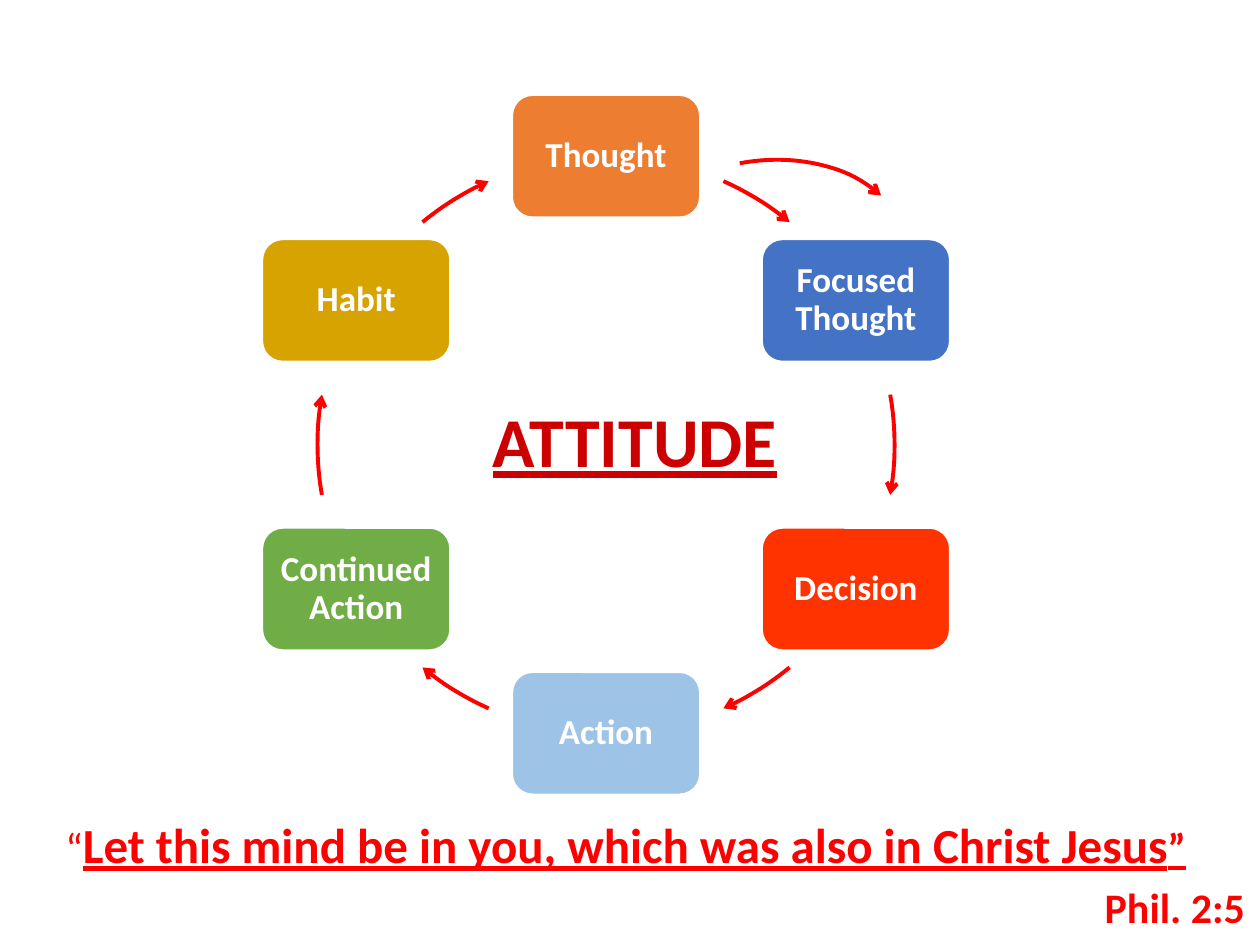
from math import cos, radians, sin

from lxml.etree import SubElement
from pptx import Presentation
from pptx.dml.color import RGBColor
from pptx.enum.shapes import MSO_SHAPE
from pptx.enum.text import MSO_ANCHOR, PP_ALIGN
from pptx.oxml.ns import qn
from pptx.util import Inches, Pt

COLORS = {
    "white": "FFFFFF", "red": "FF0000", "crimson": "CC0000",
    "orange": "ED7D31", "blue": "4472C4", "scarlet": "FF3300",
    "sky": "9DC3E6", "green": "70AD47", "gold": "D6A300",
}
STEPS = [
    ("Thought", "orange"), ("Focused Thought", "blue"), ("Decision", "scarlet"),
    ("Action", "sky"), ("Continued Action", "green"), ("Habit", "gold"),
]
# Clockwise sweeps in degrees, measured from three o'clock
SWEEPS = [(294, 309.5), (350, 10), (50.5, 66), (114, 129.5), (170, 190), (230.5, 246)]
MID_X, MID_Y, RADIUS = 4.81, 3.53, 2.29
BOX_W, BOX_H = 1.49, 0.97


def color(name):
    return RGBColor.from_string(COLORS[name])


def apply(target, values):
    for name, value in values.items():
        setattr(target, name, value)


class Page:
    """Holds the shared text style and the slide being built."""

    def __init__(self, slide):
        self.slide = slide
        self.font = {"name": "Calibri", "bold": True}

    def label(self, para, text, tint, **style):
        run = para.add_run()
        run.text = text
        apply(run.font, {**self.font, **style})
        run.font.color.rgb = color(tint)

    def shape(self, kind, *place):
        shape = self.slide.shapes.add_shape(kind, *map(Inches, place))
        shape.shadow.inherit = False
        return shape

    def box(self, text, tint, x, y):
        """Draw a step box centred on x, y."""
        box = self.shape(MSO_SHAPE.ROUNDED_RECTANGLE,
                         x - BOX_W / 2, y - BOX_H / 2, BOX_W, BOX_H)
        box.fill.solid()
        box.fill.fore_color.rgb = color(tint)
        box.line.color.rgb = color("white")
        box.line.width = Pt(1)
        apply(box.text_frame, {
            "word_wrap": True, "vertical_anchor": MSO_ANCHOR.MIDDLE,
            "margin_left": Inches(0.1), "margin_right": Inches(0.1),
        })
        para = box.text_frame.paragraphs[0]
        apply(para, {"alignment": PP_ALIGN.CENTER, "line_spacing": 0.9})
        self.label(para, text, "white", size=Pt(20))

    def arc(self, place, start, end, turn=0):
        """Draw a clockwise arrow along the ellipse filling place."""
        arc = self.shape(MSO_SHAPE.ARC, *place)
        for i, angle in enumerate((start, end)):
            arc.adjustments[i] = angle * 0.6  # 60000ths of a degree over 100000
        arc.rotation = turn
        arc.fill.background()
        arc.line.color.rgb = color("red")
        arc.line.width = Pt(2.25)
        line = arc.element.spPr.find(qn("a:ln"))
        SubElement(line, qn("a:tailEnd"), type="arrow")

    def text(self, place, lines, anchor=MSO_ANCHOR.TOP):
        """Add a text box; each line is an alignment and its styled runs."""
        frame = self.slide.shapes.add_textbox(*map(Inches, place)).text_frame
        apply(frame, {"word_wrap": True, "vertical_anchor": anchor})
        for i, (align, runs) in enumerate(lines):
            para = frame.add_paragraph() if i else frame.paragraphs[0]
            apply(para, {"alignment": align, "line_spacing": 0.9,
                         "space_before": Pt(7.5 if i else 0)})
            for text, tint, style in runs:
                self.label(para, text, tint, **style)


def main():
    deck = Presentation()
    apply(deck, {"slide_width": Inches(10), "slide_height": Inches(7.5)})
    page = Page(deck.slides.add_slide(deck.slide_layouts[6]))

    ring = (MID_X - RADIUS, MID_Y - RADIUS, 2 * RADIUS, 2 * RADIUS)
    for i, ((text, tint), sweep) in enumerate(zip(STEPS, SWEEPS)):
        angle = radians(60 * i - 90)
        page.box(text, tint, MID_X + RADIUS * cos(angle), MID_Y + RADIUS * sin(angle))
        page.arc(ring, *sweep)

    page.text((0.54, 2.86, 9, 1.34), [
        (PP_ALIGN.CENTER, [("ATTITUDE", "crimson", {"size": Pt(40), "underline": True})]),
    ], MSO_ANCHOR.MIDDLE)
    page.text((0.42, 6.47, 9.56, 0.94), [
        (PP_ALIGN.LEFT, [
            ("“", "red", {"size": Pt(24), "bold": False}),
            ("Let this mind be in you, which was also in Christ Jesus", "red",
             {"size": Pt(28), "underline": True}),
            ("”", "red", {"size": Pt(24), "underline": True}),
        ]),
        (PP_ALIGN.RIGHT, [("Phil. 2:5", "red", {"size": Pt(24)})]),
    ])
    page.arc((4.83, 1.28, 2.42, 1.81), 270, 337.1, turn=349.3)
    deck.save("out.pptx")


if __name__ == "__main__":
    main()
